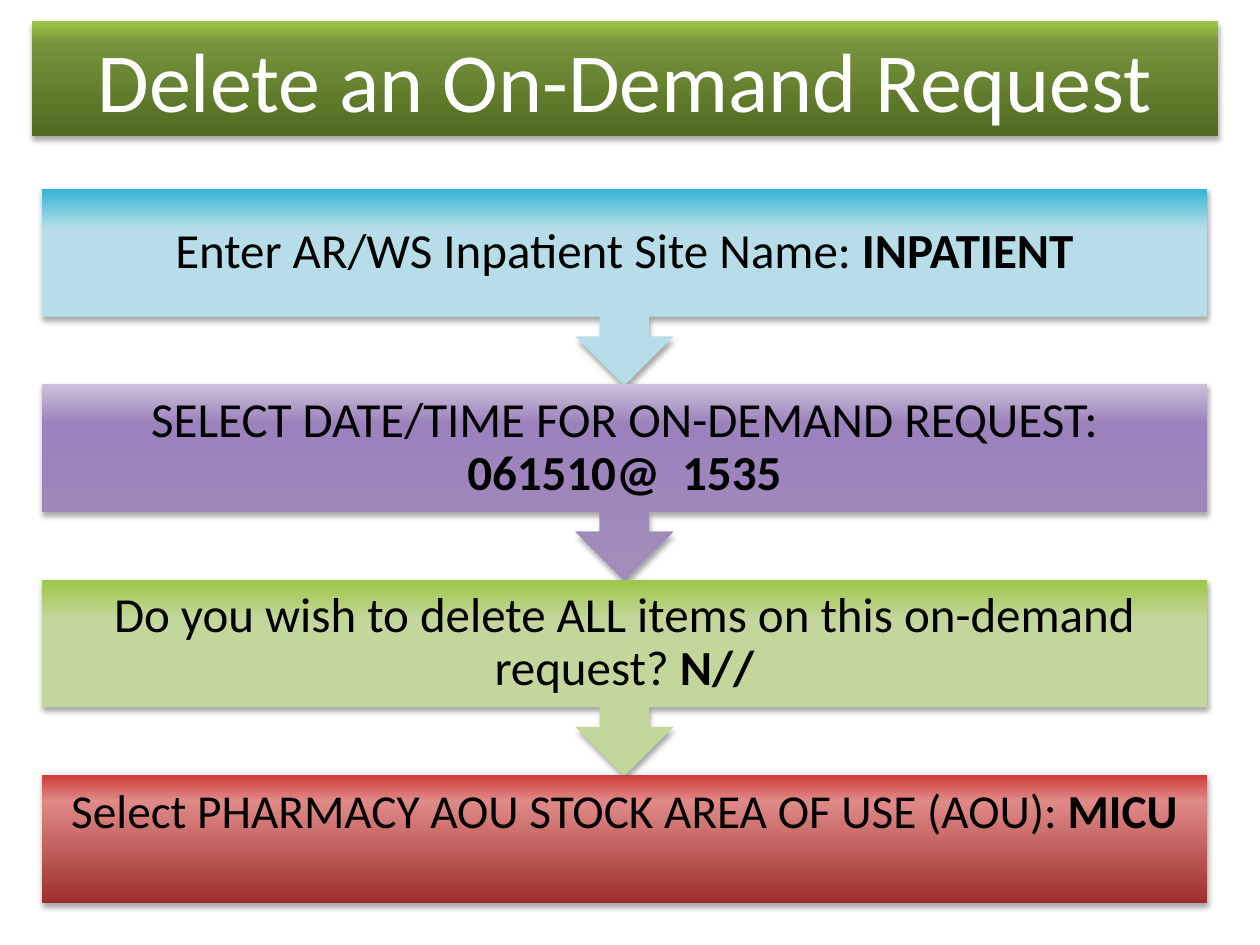
from copy import deepcopy
from dataclasses import dataclass

from lxml import etree
from pptx import Presentation
from pptx.dml.color import RGBColor
from pptx.enum import shapes, text
from pptx.oxml import ns
from pptx.util import Inches, Pt


@dataclass(frozen=True)
class Theme:
    """Fonts, type sizes and bottom-to-top gradient colours."""
    font: str = "Calibri"
    title_size: int = 48
    step_size: int = 28
    last_size: int = 27
    title_ink: str = "FFFFFF"
    step_ink: str = "000000"
    title_fill: tuple = ("516A20", "77933C", "9DC746")
    blue: tuple = ("B7DEE8", "B7DEE8", "34B4D6")
    purple: tuple = ("A18CBA", "9C82BC", "CCC1DA")
    green: tuple = ("C3D69B", "C3D69B", "9DC746")
    red: tuple = ("9C2F2D", "E08A88", "CE3B37")


THEME = Theme()
STEPS = [
    ("Enter AR/WS Inpatient Site Name: ", "INPATIENT", THEME.blue),
    ("SELECT DATE/TIME FOR ON-DEMAND REQUEST: ", "061510@  1535", THEME.purple),
    ("Do you wish to delete ALL items on this on-demand request? ", "N//", THEME.green),
    ("Select PHARMACY AOU STOCK AREA OF USE (AOU): ", "MICU", THEME.red),
]


def add_shadow(shape):
    """Give the shape a soft shadow below it."""
    shape.shadow.inherit = False
    effects = shape._element.spPr.find(ns.qn("a:effectLst"))
    shadow = etree.SubElement(effects, ns.qn("a:outerShdw"), blurRad=str(Pt(3.1)),
                              dist=str(Pt(1.8)), dir="5400000", rotWithShape="0")
    color = etree.SubElement(shadow, ns.qn("a:srgbClr"), val="000000")
    etree.SubElement(color, ns.qn("a:alpha"), val="35000")


def style_shape(shape, colors):
    """Apply a vertical three-stop gradient, no outline and a shadow."""
    shape.fill.gradient()
    shape.fill.gradient_angle = 90
    stop_list = shape._element.spPr.find(".//" + ns.qn("a:gsLst"))
    stop_list.insert(1, deepcopy(stop_list[0]))
    for stop, position, color in zip(shape.fill.gradient_stops, (0, 0.8, 1), colors):
        stop.position = position
        stop.color.rgb = RGBColor.from_string(color)
    shape.line.fill.background()
    add_shadow(shape)


def style_para(para, size, ink):
    """Centre a paragraph and set its font."""
    para.alignment = text.PP_ALIGN.CENTER
    para.font.name = THEME.font
    para.font.size = Pt(size)
    para.font.color.rgb = RGBColor.from_string(ink)


def place_title(page, wording, left, top, width, height):
    """Place the title banner in the given box."""
    title = page.shapes.title
    title.left, title.top, title.width, title.height = left, top, width, height
    style_shape(title, THEME.title_fill)
    frame = title.text_frame
    frame.text = wording
    frame.vertical_anchor = text.MSO_ANCHOR.MIDDLE
    style_para(frame.paragraphs[0], THEME.title_size, THEME.title_ink)


def place_step(page, step, is_last, left, top, width, height):
    """Place one step, with a down arrow unless it is the last."""
    prompt, answer, colors = step
    kind = (shapes.MSO_SHAPE.RECTANGLE if is_last
            else shapes.MSO_SHAPE.DOWN_ARROW_CALLOUT)
    box = page.shapes.add_shape(kind, left, top, width, height)
    style_shape(box, colors)
    frame = box.text_frame
    frame.word_wrap = True
    frame.margin_left = frame.margin_right = Inches(0.2)
    frame.margin_top = frame.margin_bottom = Inches(0.1)
    frame.vertical_anchor = text.MSO_ANCHOR.TOP if is_last else text.MSO_ANCHOR.MIDDLE
    para = frame.paragraphs[0]
    style_para(para, THEME.last_size if is_last else THEME.step_size, THEME.step_ink)
    para.line_spacing = 0.9
    para.add_run().text = prompt
    span = para.add_run()
    span.text = answer
    span.font.bold = True


def place_steps(page, steps, left, top, width, pitch):
    """Stack the steps downwards at an equal pitch."""
    for index, step in enumerate(steps):
        is_last = index == len(steps) - 1
        height = Inches(1.02 if is_last else 1.56)
        place_step(page, step, is_last, left, top + index * pitch, width, height)


def main():
    """Build and save the deck."""
    deck = Presentation()
    deck.slide_width, deck.slide_height = Inches(10), Inches(7.5)
    page = deck.slides.add_slide(deck.slide_layouts[5])
    place_title(page, "Delete an On-Demand Request",
                Inches(0.25), Inches(0.17), Inches(9.42), Inches(0.91))
    place_steps(page, STEPS, Inches(0.33), Inches(1.5), Inches(9.25), Inches(1.55))
    deck.save("out.pptx")


if __name__ == "__main__":
    main()
